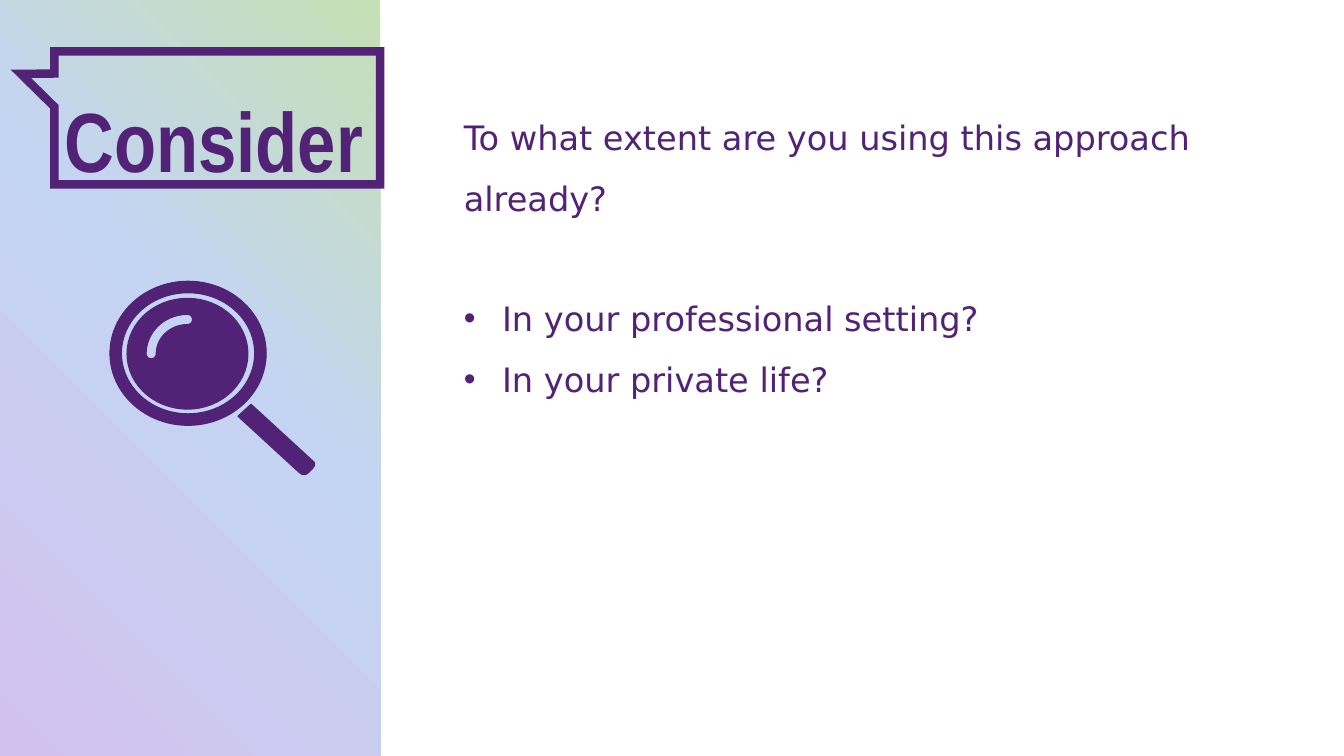
from dataclasses import dataclass
from math import cos, radians, sin

from lxml.etree import SubElement
from pptx import Presentation
from pptx.dml.color import RGBColor
from pptx.enum.shapes import MSO_SHAPE
from pptx.enum.text import MSO_ANCHOR, MSO_AUTO_SIZE, PP_ALIGN
from pptx.oxml import parse_xml
from pptx.oxml.ns import nsdecls, qn
from pptx.util import Emu, Pt

PX = 9144  # EMU per px, 100 px to the inch
PURPLE = "512275"
PANEL_STOPS = [(0, "D3C1ED"), (56, "C4D5F3"), (100, "C5E0B4")]
Point = tuple[float, float]


@dataclass
class Box:
    left: int
    top: int
    width: int
    height: int

    def emu(self) -> list[Emu]:
        return [Emu(n * PX) for n in (self.left, self.top, self.width, self.height)]


@dataclass
class Line:
    text: str
    bullet: bool = False
    space_before: int = 0


LINES = [
    Line("To what extent are you using this approach already?"),
    Line("In your professional setting?", bullet=True, space_before=43),
    Line("In your private life?", bullet=True),
]


def colour(value: str) -> RGBColor:
    return RGBColor.from_string(value)


def add_preset(page, kind, box: Box):
    shape = page.shapes.add_shape(kind, *box.emu())
    shape.shadow.inherit = False
    return shape


def paint(shape) -> None:
    shape.shadow.inherit = False
    shape.fill.solid()
    shape.fill.fore_color.rgb = colour(PURPLE)
    shape.line.color.rgb = colour(PURPLE)
    shape.line.width = Pt(0.75)


def arc(x: int, y: int, rx: float, ry: float, start: int, end: int) -> list[Point]:
    step = 6 if end > start else -6
    angles = [radians(a) for a in range(start, end + step, step)]
    return [(x + rx * cos(a), y + ry * sin(a)) for a in angles]


def add_outline(page, *contours: list[Point]) -> None:
    scaled = [[(x * PX, y * PX) for x, y in contour] for contour in contours]
    builder = page.shapes.build_freeform(*scaled[0][0], scale=1.0)
    builder.add_line_segments(scaled[0][1:], close=True)
    for contour in scaled[1:]:
        builder.move_to(*contour[0])
        builder.add_line_segments(contour[1:], close=True)
    paint(builder.convert_to_shape())


def add_panel(page) -> None:
    panel = add_preset(page, MSO_SHAPE.RECTANGLE, Box(0, 0, 377, 750))
    panel.line.fill.background()
    stops = "".join(
        f'<a:gs pos="{place * 1000}"><a:srgbClr val="{value}"/></a:gs>'
        for place, value in PANEL_STOPS
    )
    gradient = parse_xml(
        f'<a:gradFill {nsdecls("a")} rotWithShape="1"><a:gsLst>{stops}</a:gsLst>'
        '<a:path path="circle"><a:fillToRect t="100000" r="100000"/></a:path>'
        "</a:gradFill>"
    )
    panel.element.spPr.find(qn("a:prstGeom")).addnext(gradient)


def add_callout(page) -> None:
    callout = add_preset(page, MSO_SHAPE.RECTANGULAR_CALLOUT, Box(54, 51, 323, 132))
    callout.adjustments[0] = -0.603
    callout.adjustments[1] = -0.331
    callout.fill.background()
    callout.line.color.rgb = colour(PURPLE)
    callout.line.width = Pt(6)
    # Sharp corners
    SubElement(callout.element.spPr.find(qn("a:ln")), qn("a:miter"), lim="800000")


def add_magnifier(page) -> None:
    # Rim
    rim = add_preset(page, MSO_SHAPE.DONUT, Box(109, 279, 155, 143))
    rim.adjustments[0] = 0.08
    paint(rim)
    # Lens with a round-ended glint cut out
    x, y = 186, 351
    glint = (
        arc(x, y, 41, 39, 180, 270)
        + arc(x, y - 34, 5, 5, -90, 90)
        + arc(x, y, 31, 29, 270, 180)
        + arc(x - 36, y, 5, 5, 0, 180)
    )
    add_outline(page, arc(x, y, 60, 55, 0, 360), glint)
    # Handle
    add_outline(page, [(249, 401), (236, 413), (297, 469), (300, 471), (303, 471),
                       (306, 469), (310, 465), (312, 462), (312, 459), (310, 457)])


def place(page, placeholder, box: Box):
    """Move a placeholder to the front and to its box; return its text frame."""
    page.shapes.element.append(placeholder.element)
    placeholder.left, placeholder.top, placeholder.width, placeholder.height = box.emu()
    frame = placeholder.text_frame
    frame.word_wrap = True
    frame.auto_size = MSO_AUTO_SIZE.NONE
    frame.vertical_anchor = MSO_ANCHOR.TOP
    return frame


def style(para, font: str, size: int, spacing: float, margin: int, indent: int) -> None:
    para.alignment = PP_ALIGN.LEFT
    para.line_spacing = spacing
    para.font.name = font
    para.font.size = Pt(size)
    para.font.color.rgb = colour(PURPLE)
    properties = para._p.get_or_add_pPr()
    properties.set("marL", str(margin * PX))
    properties.set("indent", str(indent * PX))


def set_bullet(para, shown: bool) -> None:
    properties = para._p.get_or_add_pPr()
    bullet = properties.makeelement(qn("a:buChar" if shown else "a:buNone"))
    if shown:
        bullet.set("char", "•")
    properties.find(qn("a:defRPr")).addprevious(bullet)
    if shown:
        font = SubElement(properties, qn("a:buFont"), typeface="Arial")
        bullet.addprevious(font)


def write_title(page) -> None:
    frame = place(page, page.shapes.title, Box(35, 63, 376, 131))
    frame.text = "Consider"
    para = frame.paragraphs[0]
    style(para, "Arial Narrow", 60, 1.2, 19, 0)
    para.font.bold = True


def write_body(page) -> None:
    frame = place(page, page.placeholders[1], Box(450, 51, 764, 487))
    frame.margin_top = Emu(45 * PX)
    frame.text = "\n".join(line.text for line in LINES)
    for para, line in zip(frame.paragraphs, LINES):
        margin = 38 if line.bullet else 0
        style(para, "DejaVu Sans", 24, 1.5, margin, -margin)
        para.space_before = Pt(line.space_before)
        set_bullet(para, line.bullet)


def main() -> None:
    deck = Presentation()
    deck.slide_width, deck.slide_height = Emu(1333 * PX), Emu(750 * PX)
    page = deck.slides.add_slide(deck.slide_layouts[1])
    add_panel(page)
    add_callout(page)
    write_title(page)
    add_magnifier(page)
    write_body(page)
    deck.save("out.pptx")


if __name__ == "__main__":
    main()
